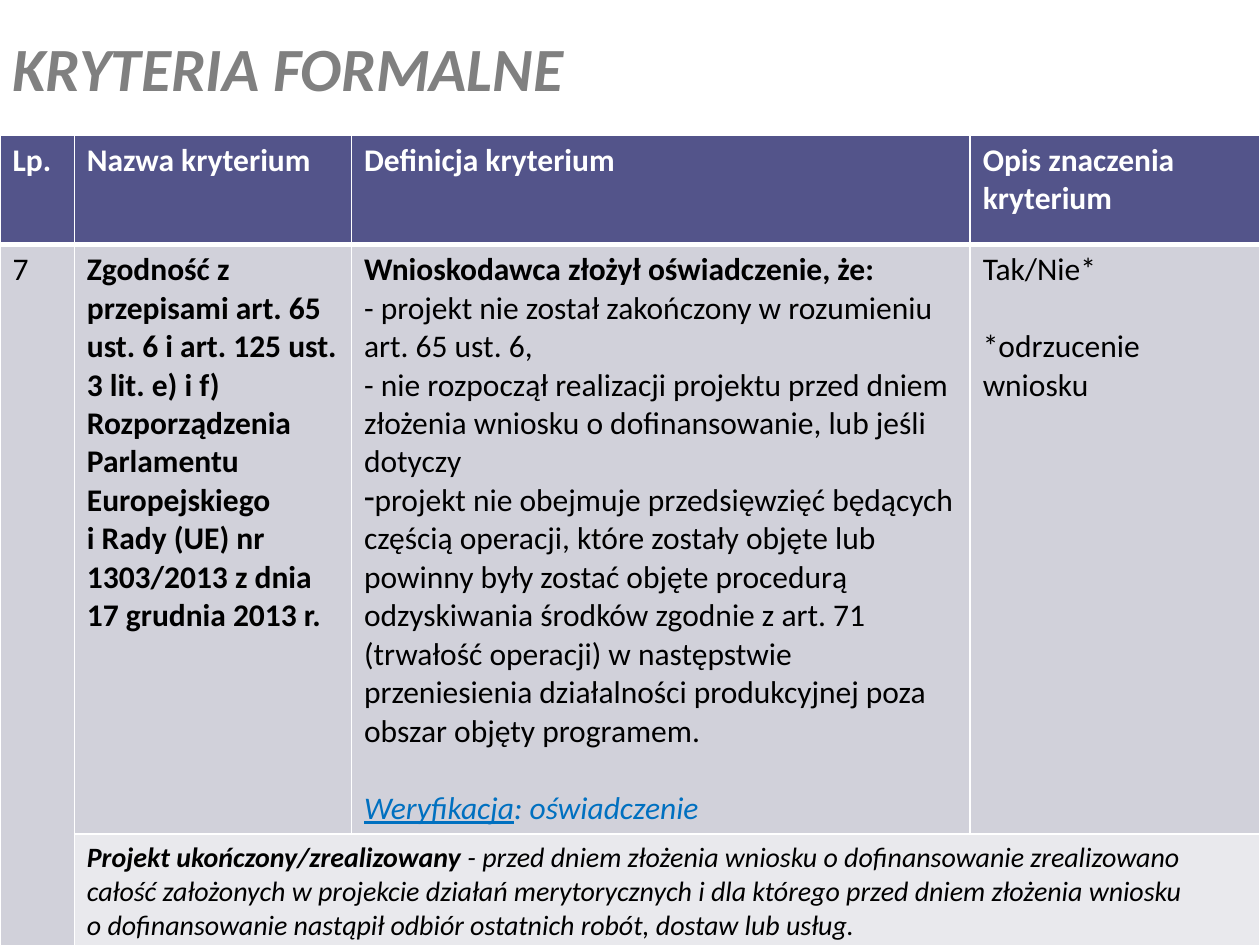
from lxml import etree
from pptx import Presentation, util as u
from pptx.dml.color import RGBColor
from pptx.enum import text
from pptx.oxml.ns import qn

WIDTH, HEIGHT = 10, 7.5
TITLE_HEIGHT = 1.07
COLUMNS = [0.59, 2.2, 4.91, 2.3]
ROWS = [0.87, 4.68, 0.88]
LINE_GAP = 22

HEADERS = ["Lp.", "Nazwa kryterium", "Definicja kryterium", "Opis znaczenia kryterium"]
NAME = ("Zgodność z przepisami art. 65 ust. 6 i art. 125 ust. 3 lit. e) i f) "
        "Rozporządzenia Parlamentu Europejskiego \vi Rady (UE) nr 1303/2013 "
        "z dnia 17 grudnia 2013 r.")
DEFINITION = [
    "Wnioskodawca złożył oświadczenie, że:",
    "- projekt nie został zakończony w rozumieniu art. 65 ust. 6,",
    "- nie rozpoczął realizacji projektu przed dniem złożenia wniosku "
    "o dofinansowanie, lub jeśli dotyczy",
    "projekt nie obejmuje przedsięwzięć będących częścią operacji, które zostały "
    "objęte lub powinny były zostać objęte procedurą odzyskiwania środków zgodnie "
    "z art. 71 (trwałość operacji) w następstwie przeniesienia działalności "
    "produkcyjnej poza obszar objęty programem.",
]
NOTE_TERM = "Projekt ukończony/zrealizowany "
NOTE = ("- przed dniem złożenia wniosku o dofinansowanie zrealizowano całość założonych "
        "w projekcie działań merytorycznych i dla którego przed dniem złożenia wniosku "
        "\vo dofinansowanie nastąpił odbiór ostatnich robót, dostaw lub usług.")


def color(value):
    return RGBColor.from_string(value)


def style(font, size=18, fill="000000", bold=False, italic=False, underline=False):
    font.name = "Calibri"
    font.size = u.Pt(size)
    font.color.rgb = color(fill)
    font.bold, font.italic, font.underline = bold, italic, underline


def write(p, content, **look):
    p.text = content
    for r in p.runs:
        style(r.font, **look)


def append(p, content, **look):
    r = p.add_run()
    r.text = content
    style(r.font, **look)


def add_bullet(p, mark):
    bullet = etree.SubElement(p._p.get_or_add_pPr(), qn("a:buChar"))
    bullet.set("char", mark)


def set_border(cell, position, side, width):
    ln = etree.Element(qn("a:ln" + side), w=str(u.Pt(width)))
    fill = etree.SubElement(ln, qn("a:solidFill"))
    etree.SubElement(fill, qn("a:srgbClr"), val="FFFFFF")
    cell._tc.get_or_add_tcPr().insert(position, ln)


def format_cell(cell, fill, bottom=1):
    for position, (side, width) in enumerate(zip("LRTB", [1, 1, 1, bottom])):
        set_border(cell, position, side, width)
    cell.fill.solid()
    cell.fill.fore_color.rgb = color(fill)


def add_title(s):
    sp = s.shapes.add_textbox(0, 0, u.Inches(0.95 * WIDTH), u.Inches(TITLE_HEIGHT))
    tf = sp.text_frame
    tf.word_wrap = True
    tf.vertical_anchor = text.MSO_ANCHOR.MIDDLE
    write(tf.paragraphs[0], "KRYTERIA FORMALNE", size=35.1, fill="808080",
          bold=True, italic=True)


def add_grid(s):
    frame = s.shapes.add_table(len(ROWS), len(COLUMNS), 0, u.Inches(TITLE_HEIGHT),
                               u.Inches(WIDTH), u.Inches(sum(ROWS)))
    table = frame.table
    for column, width in zip(table.columns, COLUMNS):
        column.width = u.Inches(width)
    for row, height in zip(table.rows, ROWS):
        row.height = u.Inches(height)
    for i, fill in enumerate(["53548A", "D1D1DA", "E9E9ED"]):
        for j in range(len(COLUMNS)):
            format_cell(table.cell(i, j), "D1D1DA" if i and not j else fill,
                        bottom=1 if i else 3)
    table.cell(1, 0).merge(table.cell(2, 0))
    table.cell(2, 1).merge(table.cell(2, 3))
    return table


def fill_definition(tf):
    for i, content in enumerate(DEFINITION):
        p = tf.add_paragraph() if i else tf.paragraphs[0]
        if i == len(DEFINITION) - 1:
            add_bullet(p, "-")
        write(p, content, bold=i == 0)
    p = tf.add_paragraph()
    p.space_before = u.Pt(LINE_GAP)
    append(p, "Weryfikacja", fill="0070C0", italic=True, underline=True)
    append(p, ": oświadczenie", fill="0070C0", italic=True)


def fill_meaning(tf):
    write(tf.paragraphs[0], "Tak/Nie*")
    p = tf.add_paragraph()
    p.space_before = u.Pt(LINE_GAP)
    write(p, "*odrzucenie wniosku")


def fill_note(tf):
    p = tf.paragraphs[0]
    write(p, NOTE_TERM + NOTE, size=16, italic=True)
    first = p.runs[0]
    rest = first.text[len(NOTE_TERM):]
    write(p, NOTE_TERM, size=16, bold=True, italic=True)
    lines = [rest] + NOTE.split("\v")[1:]
    for i, line in enumerate(lines):
        if i:
            p.add_line_break()
        append(p, line, size=16, italic=True)


def main():
    prs = Presentation()
    prs.slide_width, prs.slide_height = u.Inches(WIDTH), u.Inches(HEIGHT)
    s = prs.slides.add_slide(prs.slide_layouts[6])
    table = add_grid(s)
    for j, header in enumerate(HEADERS):
        write(table.cell(0, j).text_frame.paragraphs[0], header, fill="FFFFFF", bold=True)
    write(table.cell(1, 0).text_frame.paragraphs[0], "7")
    write(table.cell(1, 1).text_frame.paragraphs[0], NAME, bold=True)
    fill_definition(table.cell(1, 2).text_frame)
    fill_meaning(table.cell(1, 3).text_frame)
    fill_note(table.cell(2, 1).text_frame)
    add_title(s)
    prs.save("out.pptx")


if __name__ == "__main__":
    main()
